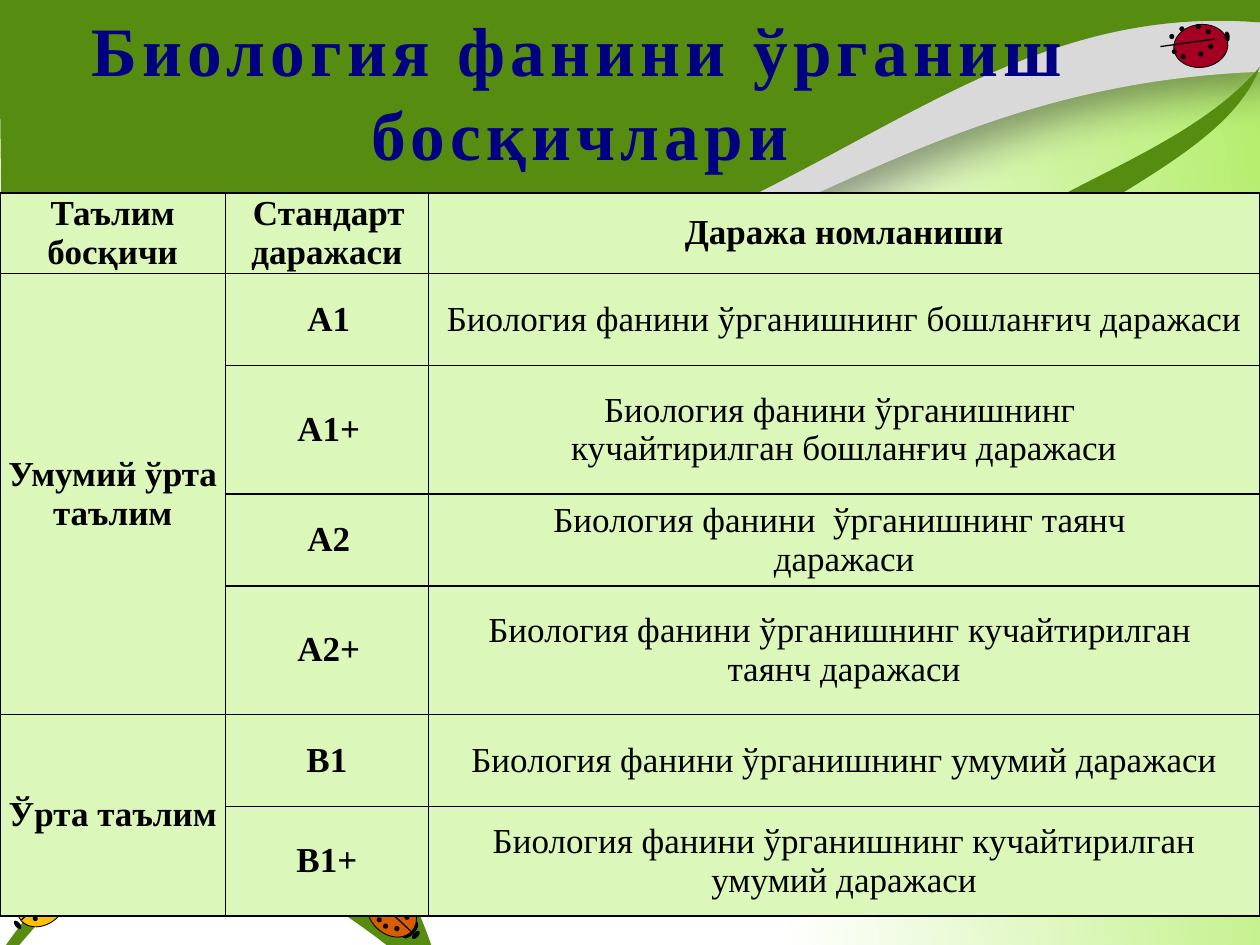
from lxml import etree
from pptx import Presentation
from pptx.dml.color import RGBColor
from pptx.enum.shapes import MSO_CONNECTOR, MSO_SHAPE
from pptx.enum.text import MSO_ANCHOR, PP_ALIGN
from pptx.oxml.ns import qn
from pptx.util import Emu, Inches, Pt

OVAL = MSO_SHAPE.OVAL
STRAIGHT = MSO_CONNECTOR.STRAIGHT
MIDDLE = MSO_ANCHOR.MIDDLE
CENTER = PP_ALIGN.CENTER

# Content
FONT = "Times New Roman"
TITLE = "Биология фанини ўрганиш босқичлари"
HEADER = ("Таълим босқичи", "Стандарт даражаси", "Даража номланиши")
STAGES = [
    (("Умумий ўрта", "таълим"), [
        ("А1", ("Биология фанини ўрганишнинг бошланғич даражаси",)),
        ("А1+", ("Биология фанини ўрганишнинг ", "кучайтирилган бошланғич даражаси")),
        ("А2", ("Биология фанини  ўрганишнинг таянч ", "даражаси")),
        ("А2+", ("Биология фанини ўрганишнинг кучайтирилган ", "таянч даражаси")),
    ]),
    (("Ўрта таълим",), [
        ("В1", ("Биология фанини ўрганишнинг умумий даражаси",)),
        ("В1+", ("Биология фанини ўрганишнинг кучайтирилган умумий даражаси",)),
    ]),
]
COLUMNS = (1.79, 1.61, 6.6)
ROWS = (0.64, 0.73, 1.02, 0.73, 1.02, 0.73, 0.87)
TABLE_TOP = 1.53

# Leaves and waves: start point, then two-number lines and six-number curves
GREEN = "568D11"
WAVE = ((0.01, 1.7), [(0.02, 1.28), (10.01, -0.03), (10, 0.57),
        (7.22, 0.68, 6.06, 2.16, 3.75, 2.41), (2.12, 2.44, 0.61, 1.48, 0.01, 1.7)])
LEAVES = [
    ((10.02, 0.18), [(10.04, -0.01), (8.37, -0.04, 1.66, -0.26, -0.01, 0), (0.01, 1.57),
     (2.1, 1.49, 2.37, 2.92, 5.23, 1.89), (7.02, 1.16, 8.17, 0.02, 10.02, 0.18)]),
    ((10, 0.53), [(9.02, 1.68, 6.57, 1.63, 7.06, 3.99), (6.97, 1.89, 9.59, 1.64, 10, 0.53)]),
    ((0.79, 6.73), [(1.26, 6.72, 2.03, 6.53, 3.53, 7.89), (3.39, 7.17, 2.77, 6.01, 2.17, 5.76),
     (1.65, 5.59, 1.01, 6.09, 0.79, 6.73)]),
    ((5.23, 6.45), [(3.86, 5.13, 2.19, 4.86, -0.27, 8.02), (0.41, 6.71, 1.91, 5.59, 3.12, 5.24),
     (4.14, 5.04, 5.26, 5.2, 5.23, 6.45)]),
]

# Ladybirds: left-top corners of the parts, and the ends of the wing line
LADYBIRDS = [
    {"color": "D85C00", "turn": 133.1, "head": (3.17, 7.34), "body": (2.94, 7.03),
     "feeler": (3.26, 7.4), "wing": (3.26, 7.39, 2.95, 7.1),
     "spots": [(3.21, 7.26), (3.13, 7.35), (3.04, 7.33), (2.99, 7.28)]},
    {"color": "FFC000", "turn": 229.3, "head": (0.02, 7.15), "body": (0.16, 6.95),
     "feeler": (0.1, 7.32), "wing": (0.17, 7.3, 0.49, 7.02), "spots": [(0.26, 7.27)]},
    {"color": "A50021", "turn": 82.8, "head": (9.56, 0.27), "body": (9.36, 0.15),
     "feeler": (9.7, 0.27), "wing": (9.64, 0.31, 9.21, 0.37),
     "spots": [(9.57, 0.23), (9.49, 0.19), (9.36, 0.21), (9.28, 0.27),
               (9.59, 0.35), (9.51, 0.41), (9.37, 0.43), (9.3, 0.39)]},
]


def color(value):
    return RGBColor.from_string(value)


def paint(target, value):
    target.fill.solid()
    target.fill.fore_color.rgb = color(value)


def add_text(frame, lines, size=20, bold=True, ink="000000", spacing=None, indent=0):
    for number, line in enumerate(lines):
        paragraph = frame.paragraphs[0] if number == 0 else frame.add_paragraph()
        paragraph.alignment = CENTER
        if indent:
            properties = paragraph._p.get_or_add_pPr()
            properties.set("marL", "0")
            properties.set("indent", str(Inches(indent)))
        run = paragraph.add_run()
        run.text = line
        run.font.name, run.font.size, run.font.bold = FONT, Pt(size), bold
        run.font.color.rgb = color(ink)
        if spacing:
            run._r.get_or_add_rPr().set("spc", str(spacing * 100))


def add_outline(shapes, start, segments, fill):
    # Draw through every point, then turn each curve's three lines into one Bezier
    points = [segment[i:i + 2] for segment in segments for i in range(0, len(segment), 2)]
    grid = [(round(x * 100), round(y * 100)) for x, y in [start] + points]
    builder = shapes.build_freeform(*grid[0], scale=Inches(1) / 100)
    builder.add_line_segments(grid[1:], close=True)
    shape = builder.convert_to_shape()
    lines = iter(list(shape._element.iter(qn("a:lnTo"))))
    for segment in segments:
        group = [next(lines) for _ in range(len(segment) // 2)]
        if len(group) == 3:
            curve = etree.Element(qn("a:cubicBezTo"))
            group[0].addprevious(curve)
            for line in group:
                curve.append(line[0])
                line.getparent().remove(line)
    paint(shape, fill)
    shape.line.fill.background()
    shape.shadow.inherit = False
    return shape


def add_oval(shapes, corner, size, turn, fill="000000", outlined=False):
    shape = shapes.add_shape(OVAL, *map(Inches, corner + size))
    shape.rotation = turn
    paint(shape, fill)
    shape.shadow.inherit = False
    if outlined:
        shape.line.color.rgb = color("000000")
        shape.line.width = Pt(0.5)
    else:
        shape.line.fill.background()


def add_ladybird(shapes, bug):
    turn = bug["turn"]
    add_oval(shapes, bug["head"], (0.17, 0.08), turn)
    add_oval(shapes, bug["body"], (0.34, 0.43), turn, bug["color"], outlined=True)
    wing = shapes.add_connector(STRAIGHT, *map(Inches, bug["wing"]))
    wing.line.color.rgb = color("000000")
    wing.line.width = Pt(0.75)
    etree.SubElement(wing._element.spPr, qn("a:effectLst"))
    add_oval(shapes, bug["feeler"], (0.08, 0.04), turn)
    for spot in bug["spots"]:
        add_oval(shapes, spot, (0.04, 0.04), turn)


def add_shadow(shape):
    effects = shape._element.spPr.find(qn("a:effectLst"))
    shadow = etree.SubElement(effects, qn("a:outerShdw"), blurRad=str(Pt(25)), dist=str(Pt(12)),
                              dir=str(45 * 60000), algn="tl", rotWithShape="0")
    ink = etree.SubElement(shadow, qn("a:srgbClr"), val="000000")
    etree.SubElement(ink, qn("a:alpha"), val="40000")


def format_cell(cell):
    paint(cell, "DCF7BA")
    cell.vertical_anchor = MIDDLE
    cell.margin_left = cell.margin_right = Inches(0.02)
    cell.margin_top = cell.margin_bottom = Emu(0)
    properties = cell._tc.get_or_add_tcPr()
    for position, side in enumerate(("lnL", "lnR", "lnT", "lnB")):
        border = etree.Element(qn(f"a:{side}"), w=str(Pt(1)))
        fill = etree.SubElement(border, qn("a:solidFill"))
        etree.SubElement(fill, qn("a:srgbClr"), val="000000")
        properties.insert(position, border)


def add_levels_table(shapes):
    frame = shapes.add_table(len(ROWS), len(COLUMNS), 0, Inches(TABLE_TOP),
                             Inches(sum(COLUMNS)), Inches(sum(ROWS)))
    table = frame.table
    for column, width in zip(table.columns, COLUMNS):
        column.width = Inches(width)
    for row, height in zip(table.rows, ROWS):
        row.height = Inches(height)
    for cell in table.iter_cells():
        format_cell(cell)
    for column, heading in enumerate(HEADER):
        add_text(table.cell(0, column).text_frame, [heading], indent=0.03 if column == 1 else 0)
    row = 1
    for number, (stage, levels) in enumerate(STAGES):
        table.cell(row, 0).merge(table.cell(row + len(levels) - 1, 0))
        add_text(table.cell(row, 0).text_frame, stage)
        for level, name in levels:
            add_text(table.cell(row, 1).text_frame, [level], indent=0.03 if number == 0 else 0)
            add_text(table.cell(row, 2).text_frame, name, bold=False)
            row += 1


def main():
    presentation = Presentation()
    presentation.slide_width, presentation.slide_height = Inches(10), Inches(7.5)
    slide = presentation.slides.add_slide(presentation.slide_layouts[5])
    shapes = slide.shapes

    # Background
    background = slide.background.fill
    background.gradient()
    background.gradient_angle = 10
    for stop, (position, value) in zip(background.gradient_stops, ((0.55, "FFFFFF"), (1, "B3ED6A"))):
        stop.position = position
        stop.color.rgb = color(value)

    # Decoration
    add_shadow(add_outline(shapes, *WAVE, "D9D9D9"))
    for leaf in LEAVES:
        add_outline(shapes, *leaf, GREEN)
    for bug in LADYBIRDS:
        add_ladybird(shapes, bug)

    # Title, brought in front of the decoration
    title = shapes.title
    title.left, title.top, title.width, title.height = map(Inches, (0.03, 0.05, 9.15, 1.34))
    title.text_frame.word_wrap = True
    title.text_frame.vertical_anchor = MIDDLE
    add_text(title.text_frame, [TITLE], size=39.6, ink="000080", spacing=3)
    shapes._spTree.append(title._element)

    add_levels_table(shapes)
    presentation.save("out.pptx")


if __name__ == "__main__":
    main()
